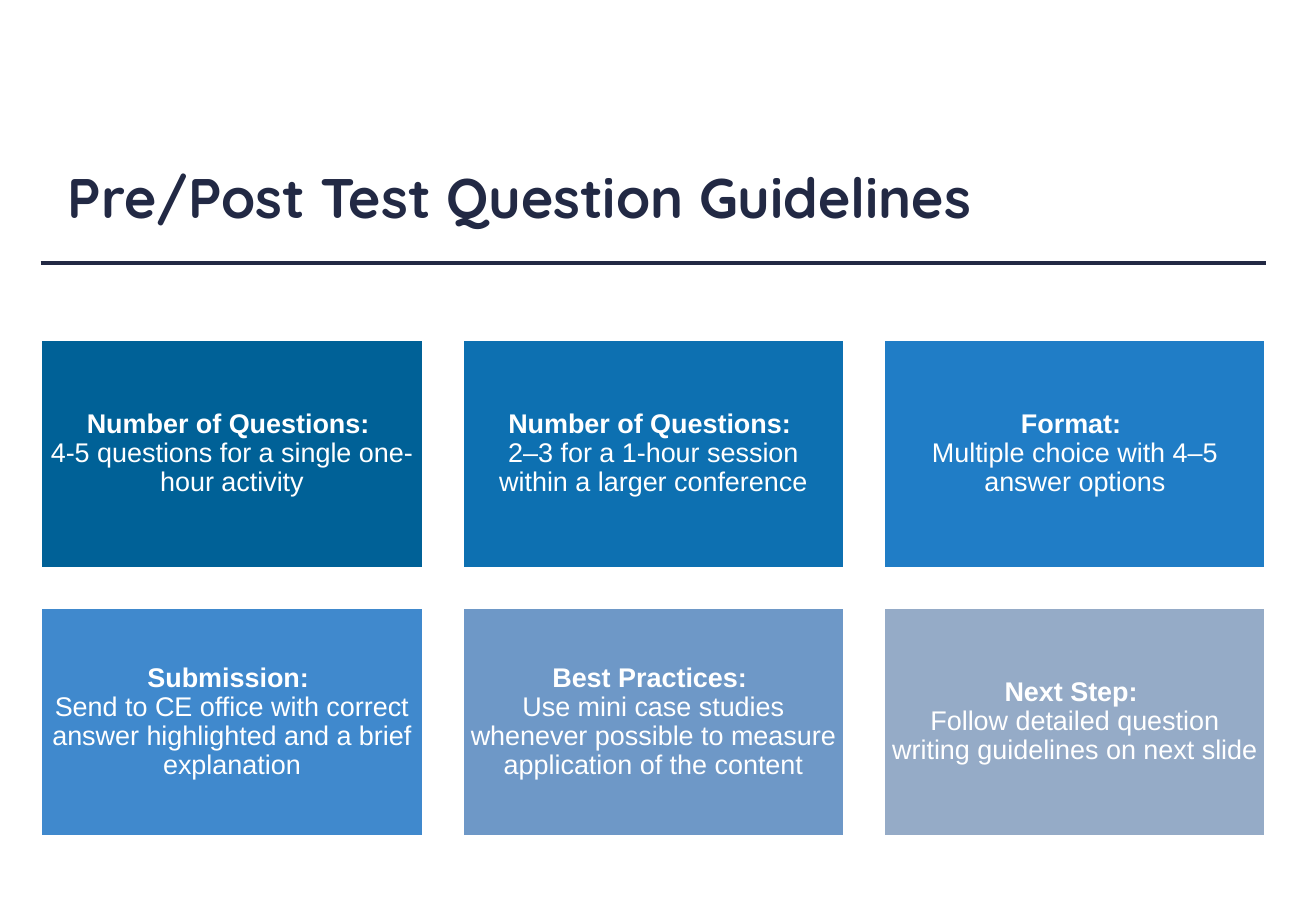
from pptx import Presentation
from pptx.dml.color import RGBColor
from pptx.enum.shapes import MSO_CONNECTOR, MSO_SHAPE
from pptx.enum.text import MSO_ANCHOR, PP_ALIGN
from pptx.util import Cm, Pt
from lxml import etree

STRAIGHT = MSO_CONNECTOR.STRAIGHT
RECTANGLE = MSO_SHAPE.RECTANGLE
TOP, MIDDLE = MSO_ANCHOR.TOP, MSO_ANCHOR.MIDDLE
LEFT, CENTER = PP_ALIGN.LEFT, PP_ALIGN.CENTER

TITLE = "Pre/Post Test Question Guidelines"
CARDS = [
    ("Number of Questions: ", "4-5 questions for a single one-hour activity", "006197"),
    ("Number of Questions: ", "2–3 for a 1-hour session within a larger conference", "0D70B1"),
    ("Format: ", "Multiple choice with 4–5 answer options", "207DC6"),
    ("Submission: ", "Send to CE office with correct answer highlighted and a brief explanation", "4089CD"),
    ("Best Practices: ", "Use mini case studies whenever possible to measure application of the content", "6E98C7"),
    ("Next Step: ", "Follow detailed question writing guidelines on next slide", "95ABC7"),
]
NAVY, WHITE = "222944", "FFFFFF"

# Lengths in centimetres
MARGIN, GRID_TOP = 0.85, 7.09
CARD_WIDTH, CARD_HEIGHT, GAP = 8, 4.8, 0.81
COLUMNS = 3
GRID_WIDTH = COLUMNS * CARD_WIDTH + (COLUMNS - 1) * GAP
RULE_Y = 5.5


def color(value):
    return RGBColor.from_string(value)


def set_frame(frame, anchor, side, end):
    """Set wrapping, anchor and insets (centimetres) of a text frame."""
    frame.word_wrap = True
    frame.vertical_anchor = anchor
    frame.margin_left = frame.margin_right = Cm(side)
    frame.margin_top = frame.margin_bottom = Cm(end)


def set_font(font, name, size, fill, bold):
    font.name, font.size, font.bold = name, Pt(size), bold
    font.color.rgb = color(fill)


def add_title(page):
    title = page.shapes.title
    title.left, title.top, title.width, title.height = Cm(1.37), Cm(3.38), Cm(24.77), Cm(2.16)
    set_frame(title.text_frame, TOP, 0.05, 0.03)
    title.text_frame.text = TITLE
    para = title.text_frame.paragraphs[0]
    para.alignment = LEFT
    set_font(para.runs[0].font, "Quicksand", 33, NAVY, True)


def add_rule(page):
    rule = page.shapes.add_connector(
        STRAIGHT, Cm(MARGIN), Cm(RULE_Y), Cm(MARGIN + GRID_WIDTH), Cm(RULE_Y))
    rule.line.color.rgb = color(NAVY)
    rule.line.width = Pt(2.25)
    properties = rule._element.spPr
    namespace = properties.nsmap["a"]
    etree.SubElement(properties, f"{{{namespace}}}effectLst")


def add_card(page, index, heading, body, fill):
    row, column = divmod(index, COLUMNS)
    card = page.shapes.add_shape(
        RECTANGLE,
        Cm(MARGIN + column * (CARD_WIDTH + GAP)),
        Cm(GRID_TOP + row * (CARD_HEIGHT + GAP)),
        Cm(CARD_WIDTH), Cm(CARD_HEIGHT))
    card.shadow.inherit = False
    card.fill.solid()
    card.fill.fore_color.rgb = color(fill)
    card.line.color.rgb = color(WHITE)
    card.line.width = Pt(2)
    set_frame(card.text_frame, MIDDLE, 0.17, 0.17)
    para = card.text_frame.paragraphs[0]
    para.text = f"{heading}\v{body}"
    para.alignment = CENTER
    para.line_spacing = 0.9
    for span, bold in zip(para.runs, (True, False)):
        set_font(span.font, "Arial", 16, WHITE, bold)


def main():
    deck = Presentation()
    deck.slide_width, deck.slide_height = Cm(27.51), Cm(19.05)
    page = deck.slides.add_slide(deck.slide_layouts.get_by_name("Title Only"))
    add_rule(page)
    add_title(page)
    for index, card in enumerate(CARDS):
        add_card(page, index, *card)
    deck.save("out.pptx")


if __name__ == "__main__":
    main()
